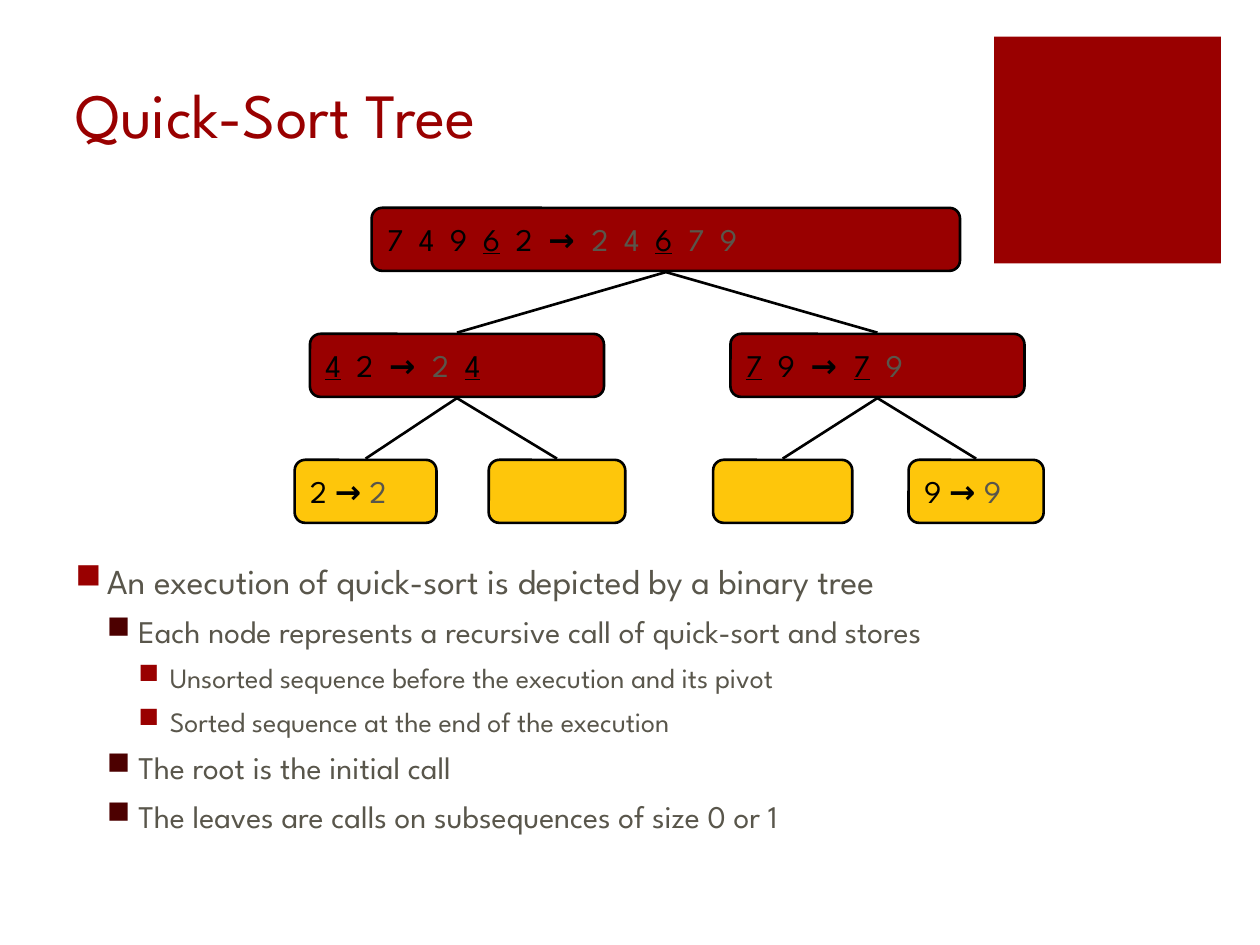
import pptx
import pptx.dml.color
import pptx.enum.shapes
import pptx.enum.text
import pptx.oxml.ns
import pptx.util
from lxml import etree

Pt = pptx.util.Pt
RGBColor = pptx.dml.color.RGBColor
Shape = pptx.enum.shapes.MSO_SHAPE
Anchor = pptx.enum.text.MSO_ANCHOR
Align = pptx.enum.text.PP_ALIGN
qn = pptx.oxml.ns.qn

RED = RGBColor(0x99, 0x00, 0x00)
DARK_RED = RGBColor(0x4C, 0x00, 0x00)
YELLOW = RGBColor(0xFE, 0xC6, 0x0B)
GREY = RGBColor(0x59, 0x56, 0x4B)
BLACK = RGBColor(0x00, 0x00, 0x00)

# Run styles inside a tree node: colour, bold, underline
INPUT = (BLACK, False, False)
PIVOT = (BLACK, False, True)
ARROW = (BLACK, True, False)
SORTED = (GREY, False, False)

NODE_HEIGHT = 36
LEVEL_TOPS = (118.8, 190.8, 262.8)

# Outline levels: text size, bullet colour
OUTLINE = ((20, RED), (18, DARK_RED), (16, RED))
INDENT = 18


class TreeSlide:
    font_name = "League Spartan"
    line_width = 1.5
    edge_gap = 0.7

    def __init__(self, deck):
        self.slide = deck.slides.add_slide(deck.slide_layouts[5])
        self.shapes = self.slide.shapes

    def style(self, run, size, color, bold=False, underline=False):
        font = run.font
        font.name, font.size = self.font_name, Pt(size)
        font.color.rgb = color
        font.bold, font.underline = bold, underline

    def title(self, text, left, top, width, height):
        heading = self.shapes.title
        heading.left, heading.top = Pt(left), Pt(top)
        heading.width, heading.height = Pt(width), Pt(height)
        frame = heading.text_frame
        frame.text = text
        frame.auto_size = pptx.enum.text.MSO_AUTO_SIZE.NONE
        frame.vertical_anchor = Anchor.BOTTOM
        frame.paragraphs[0].alignment = Align.LEFT
        self.style(frame.paragraphs[0].runs[0], 36, RED)

    def block(self, kind, left, top, width, height, fill):
        block = self.shapes.add_shape(kind, Pt(left), Pt(top), Pt(width), Pt(height))
        block.shadow.inherit = False
        block.fill.solid()
        block.fill.fore_color.rgb = fill
        block.line.fill.background()
        return block

    def node(self, level, left, width, fill, parts):
        node = self.block(Shape.ROUNDED_RECTANGLE, left, LEVEL_TOPS[level],
                          width, NODE_HEIGHT, fill)
        node.line.color.rgb = BLACK
        node.line.width = Pt(self.line_width)
        node.text_frame.vertical_anchor = Anchor.MIDDLE
        sequence = node.text_frame.paragraphs[0]
        sequence.alignment = Align.LEFT
        for text, run_style in parts:
            run = sequence.add_run()
            run.text = text
            self.style(run, 18, *run_style)
        return node

    def edge(self, parent, child):
        gap = Pt(self.edge_gap)
        edge = self.shapes.add_connector(
            pptx.enum.shapes.MSO_CONNECTOR.STRAIGHT,
            parent.left + parent.width // 2, parent.top + parent.height + gap,
            child.left + child.width // 2, child.top - gap)
        edge.line.color.rgb = BLACK
        edge.line.width = Pt(self.line_width)
        etree.SubElement(edge.element.spPr, qn("a:effectLst"))

    def outline(self, items, left, top, width, height):
        box = self.shapes.add_textbox(Pt(left), Pt(top), Pt(width), Pt(height))
        frame = box.text_frame
        frame.word_wrap = True
        frame.text = "\n".join(text for _, text in items)
        for paragraph, (level, _) in zip(frame.paragraphs, items):
            size, bullet_color = OUTLINE[level]
            paragraph.level = level
            paragraph.space_before = Pt(6 if level else 18)
            self.style(paragraph.runs[0], size, GREY)
            self.bullet(paragraph, level, bullet_color)

    def bullet(self, paragraph, level, color):
        properties = paragraph._p.get_or_add_pPr()
        properties.set("marL", str(Pt(INDENT * (level + 1))))
        properties.set("indent", str(-Pt(INDENT)))
        bullet_color = etree.SubElement(properties, qn("a:buClr"))
        etree.SubElement(bullet_color, qn("a:srgbClr"), val=str(color))
        etree.SubElement(properties, qn("a:buChar"), char="■")


def main():
    deck = pptx.Presentation()
    deck.slide_width, deck.slide_height = Pt(720), Pt(540)
    page = TreeSlide(deck)

    # Corner decoration and title
    page.block(Shape.RECTANGLE, 568.1, 20.9, 129.6, 129.6, RED)
    page.title("Quick-Sort Tree", 36, 0, 512.6, 90)

    # Explanation below the tree
    page.outline([
        (0, "An execution of quick-sort is depicted by a binary tree"),
        (1, "Each node represents a recursive call of quick-sort and stores"),
        (2, "Unsorted sequence before the execution and its pivot"),
        (2, "Sorted sequence at the end of the execution"),
        (1, "The root is the initial call"),
        (1, "The leaves are calls on subsequences of size 0 or 1"),
    ], 36, 316.1, 684, 183.6)

    # Tree nodes, level by level
    root = page.node(0, 212.4, 336.2, RED, [
        ("7  4  9  ", INPUT), ("6", PIVOT), ("  2  ", INPUT), ("→  ", ARROW),
        ("2  4  ", SORTED), ("6", PIVOT), ("  7  9", SORTED)])
    smaller = page.node(1, 177.1, 168, RED, [
        ("4", PIVOT), ("  2  ", INPUT), ("→  ", ARROW),
        ("2  ", SORTED), ("4", PIVOT)])
    larger = page.node(1, 417.4, 168, RED, [
        ("7", PIVOT), ("  9  ", INPUT), ("→  ", ARROW),
        ("7", PIVOT), ("  9", SORTED)])
    leaf_2, empty_left, empty_right, leaf_9 = [
        page.node(2, left, width, YELLOW, parts) for left, width, parts in (
            (168.4, 81, [("2 ", INPUT), ("→ ", ARROW), ("2", SORTED)]),
            (279.3, 78, []),
            (407.5, 79.5, []),
            (519.2, 77.2, [("9 ", INPUT), ("→ ", ARROW), ("9", SORTED)]))]

    # Edges from each call to its two recursive calls
    for parent, children in ((root, (smaller, larger)),
                             (smaller, (leaf_2, empty_left)),
                             (larger, (empty_right, leaf_9))):
        for child in children:
            page.edge(parent, child)

    deck.save("out.pptx")


if __name__ == "__main__":
    main()
